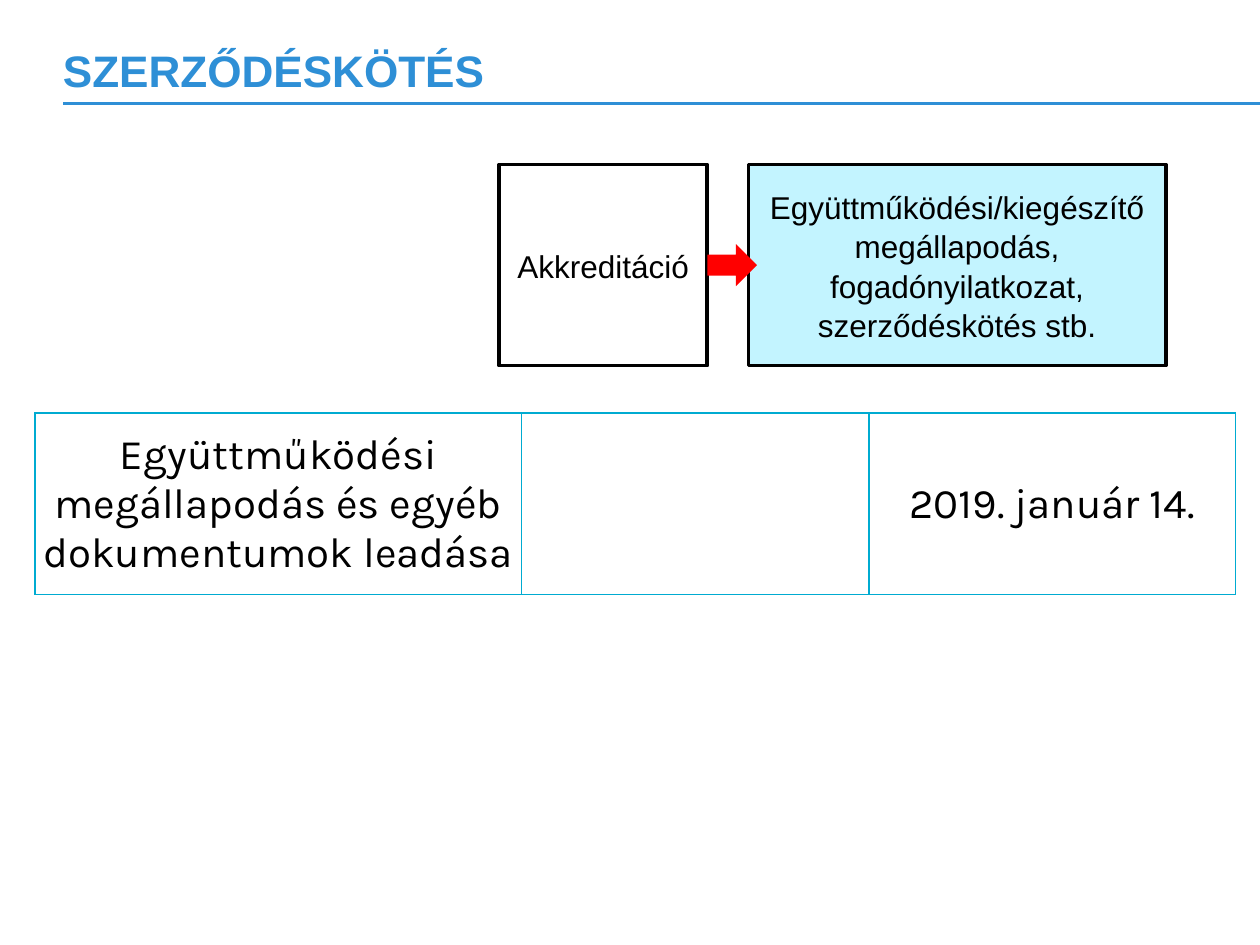
from dataclasses import dataclass

from lxml.etree import SubElement
from pptx import Presentation
from pptx.dml.color import RGBColor
from pptx.enum.shapes import MSO_CONNECTOR, MSO_SHAPE
from pptx.enum.text import MSO_ANCHOR as Anchor, PP_ALIGN as Align
from pptx.oxml.ns import qn
from pptx.util import Pt


@dataclass(frozen=True)
class Theme:
    blue: str = "2E8FD6"
    black: str = "000000"
    white: str = "FFFFFF"
    pale: str = "C3F4FF"
    red: str = "FF0000"
    grid: str = "00ABD1"
    sans: str = "Arial"
    table_font: str = "Karla"
    title_size: float = 25.2
    box_size: float = 18
    table_size: float = 24


THEME = Theme()


def color(code):
    return RGBColor.from_string(code)


def write(frame, text, *, size, font=THEME.sans, ink=THEME.black, bold=False,
          align=Align.CENTER, spacing=None):
    para = frame.paragraphs[0]
    para.alignment = align
    para.line_spacing = spacing
    span = para.add_run()
    span.text = text
    span.font.size = Pt(size)
    span.font.name = font
    span.font.bold = bold
    span.font.color.rgb = color(ink)


def add_title(page, box, text):
    """Place the heading in the box and a rule below it, to the box's right edge."""
    left, top, width, height = box
    frame = page.shapes.add_textbox(*map(Pt, (left, top, width, height))).text_frame
    frame.word_wrap = True
    frame.vertical_anchor = Anchor.MIDDLE
    frame.margin_left = frame.margin_top = frame.margin_right = frame.margin_bottom = 0
    write(frame, text, size=THEME.title_size, ink=THEME.blue, bold=True, align=Align.LEFT)

    rule_y = top + height + 7.8
    rule = page.shapes.add_connector(
        MSO_CONNECTOR.STRAIGHT, Pt(left), Pt(rule_y), Pt(left + width), Pt(rule_y))
    rule.line.color.rgb = color(THEME.blue)
    rule.line.width = Pt(1.5)
    SubElement(rule._element.spPr, qn("a:effectLst"))


def add_block(page, kind, box, fill, border=None):
    block = page.shapes.add_shape(kind, *map(Pt, box))
    block.shadow.inherit = False
    block.fill.solid()
    block.fill.fore_color.rgb = color(fill)
    if border:
        block.line.color.rgb = color(border)
        block.line.width = Pt(2)
    else:
        block.line.fill.background()
    return block


def add_step(page, box, text, fill):
    frame = add_block(page, MSO_SHAPE.RECTANGLE, box, fill, THEME.black).text_frame
    frame.word_wrap = True
    frame.vertical_anchor = Anchor.MIDDLE
    write(frame, text, size=THEME.box_size, spacing=1.04)


def add_process(page, box):
    """Place the two steps at the ends of the box, with the arrow between them."""
    left, top, width, height = box
    first, second = 119, 238.5
    add_step(page, (left, top, first, height), "Akkreditáció", THEME.white)
    add_step(page, (left + width - second, top, second, height),
             "Együttműködési/kiegészítő megállapodás, fogadónyilatkozat, "
             "szerződéskötés stb.", THEME.pale)
    arrow = 24
    add_block(page, MSO_SHAPE.RIGHT_ARROW,
              (left + first, top + (height - arrow) / 2, 28.4, arrow), THEME.red)


def set_borders(cell):
    props = cell._tc.get_or_add_tcPr()
    for place, side in enumerate(("a:lnL", "a:lnR", "a:lnT", "a:lnB")):
        line = props.makeelement(qn(side), {"w": str(Pt(1))})
        fill = SubElement(line, qn("a:solidFill"))
        SubElement(fill, qn("a:srgbClr"), val=THEME.grid)
        props.insert(place, line)


def add_deadlines(page, box, widths, texts):
    table = page.shapes.add_table(1, len(widths), *map(Pt, box)).table
    table.first_row = table.horz_banding = False
    table.rows[0].height = Pt(box[3])
    for column, cell, width, text in zip(table.columns, table.rows[0].cells, widths, texts):
        column.width = Pt(width)
        cell.fill.solid()
        cell.fill.fore_color.rgb = color(THEME.white)
        cell.vertical_anchor = Anchor.MIDDLE
        cell.margin_left = cell.margin_right = cell.margin_top = Pt(0.7)
        cell.margin_bottom = 0
        set_borders(cell)
        if text:
            write(cell.text_frame, text, size=THEME.table_size, font=THEME.table_font)


def main():
    deck = Presentation()
    deck.slide_width, deck.slide_height = Pt(720), Pt(540)
    page = deck.slides.add_slide(deck.slide_layouts[6])
    add_title(page, (36, 28.8, 684, 22.4), "SZERZŐDÉSKÖTÉS")
    add_process(page, (285.2, 94, 381, 115))
    add_deadlines(page, (20, 236, 686, 103.6), (278, 198.5, 209.5),
                  ("Együttműködési megállapodás és egyéb dokumentumok leadása",
                   "", "2019. január 14."))
    deck.save("out.pptx")


if __name__ == "__main__":
    main()
